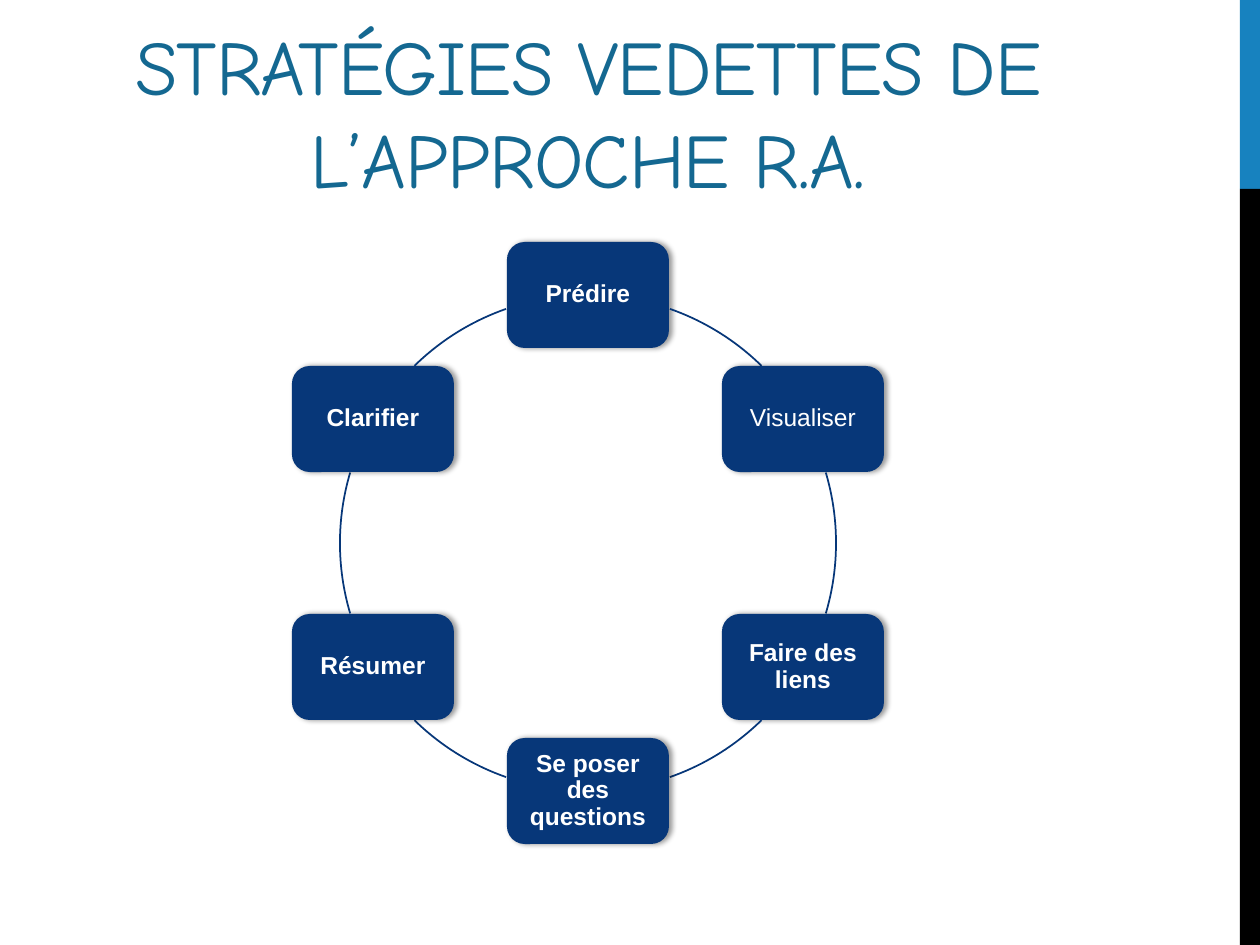
import math

import pptx
import pptx.dml.color
import pptx.enum.shapes
import pptx.enum.text
import pptx.oxml
import pptx.oxml.ns
import pptx.util

EMU_PER_PX = 914400 // 126
COLORS = {"title": "146891", "accent": "1782BF", "bar": "000000",
          "node": "073779", "text": "FFFFFF"}
SHAPES = pptx.enum.shapes.MSO_SHAPE
ANCHORS = pptx.enum.text.MSO_ANCHOR

# Clockwise from the top: label, bold
STRATEGIES = [("Prédire", True), ("Visualiser", False), ("Faire des liens", True),
              ("Se poser des questions", True), ("Résumer", True), ("Clarifier", True)]
# Visible part of the ring between neighbouring boxes, in degrees from the east
ARCS = [(289.3, 314.4), (343.5, 16.5), (45.6, 70.7),
        (109.3, 134.4), (163.5, 196.5), (225.6, 250.7)]
CENTER_X, CENTER_Y, RADIUS = 588, 543, 248
BOX_WIDTH, BOX_HEIGHT, BOX_MARGIN = 162, 106, 13


def px(*lengths):
    return [pptx.util.Emu(length * EMU_PER_PX) for length in lengths]


def rgb(name):
    return pptx.dml.color.RGBColor.from_string(COLORS[name])


def add_filled_shape(slide, kind, left, top, width, height, color):
    shape = slide.shapes.add_shape(kind, *px(left, top, width, height))
    shape.shadow.inherit = False
    shape.fill.solid()
    shape.fill.fore_color.rgb = rgb(color)
    shape.line.fill.background()
    return shape


def set_text(shape, text, font_name, size, color, anchor, bold=False):
    frame = shape.text_frame
    frame.word_wrap = True
    frame.vertical_anchor = anchor
    paragraph = frame.paragraphs[0]
    paragraph.text = text
    paragraph.alignment = pptx.enum.text.PP_ALIGN.CENTER
    paragraph.font.name = font_name
    paragraph.font.size = pptx.util.Pt(size)
    paragraph.font.bold = bold
    paragraph.font.color.rgb = rgb(color)
    return paragraph


def add_title(slide, text):
    box = slide.shapes.add_textbox(*px(63, 21, 1050, 189))
    paragraph = set_text(box, text, "Comic Neue", 44, "title", ANCHORS.BOTTOM)
    paragraph.runs[0].font._element.set("spc", "-60")


def add_soft_shadow(shape):
    effects = shape._element.spPr.find(pptx.oxml.ns.qn("a:effectLst"))
    effects.append(pptx.oxml.parse_xml(
        f'<a:outerShdw {pptx.oxml.ns.nsdecls("a")} blurRad="39400" dist="22900" dir="0">'
        '<a:srgbClr val="000000"><a:alpha val="40000"/></a:srgbClr></a:outerShdw>'))


def add_strategy(slide, index, label, bold):
    angle = math.radians(60 * index - 90)
    left = round(CENTER_X + RADIUS * math.cos(angle) - BOX_WIDTH / 2)
    top = round(CENTER_Y + RADIUS * math.sin(angle) - BOX_HEIGHT / 2)
    box = add_filled_shape(slide, SHAPES.ROUNDED_RECTANGLE, left, top,
                           BOX_WIDTH, BOX_HEIGHT, "node")
    add_soft_shadow(box)
    frame = box.text_frame
    frame.margin_left, frame.margin_top, frame.margin_right, frame.margin_bottom = px(
        *[BOX_MARGIN] * 4)
    paragraph = set_text(box, label, "Arial", 14, "text", ANCHORS.MIDDLE, bold)
    paragraph.line_spacing = 0.9


def add_arc(slide, start, end):
    arc = slide.shapes.add_shape(SHAPES.ARC, *px(
        CENTER_X - RADIUS, CENTER_Y - RADIUS, 2 * RADIUS, 2 * RADIUS))
    arc.shadow.inherit = False
    # Angles are stored in 1/60000 degree, adjustments in 1/100000
    arc.adjustments[0] = start * 0.6
    arc.adjustments[1] = end * 0.6
    arc.fill.background()
    arc.line.color.rgb = rgb("node")
    arc.line.width = pptx.util.Pt(1)


def main():
    presentation = pptx.Presentation()
    presentation.slide_width, presentation.slide_height = px(1260, 945)
    slide = presentation.slides.add_slide(presentation.slide_layouts[6])

    # Right-hand band
    add_filled_shape(slide, SHAPES.RECTANGLE, 1240, 0, 20, 189, "accent")
    add_filled_shape(slide, SHAPES.RECTANGLE, 1240, 189, 20, 756, "bar")

    add_title(slide, "STRATÉGIES VEDETTES DE L’APPROCHE R.A.")

    # Cycle of strategies
    for index, ((label, bold), (start, end)) in enumerate(zip(STRATEGIES, ARCS)):
        add_strategy(slide, index, label, bold)
        add_arc(slide, start, end)

    presentation.save("out.pptx")


if __name__ == "__main__":
    main()
